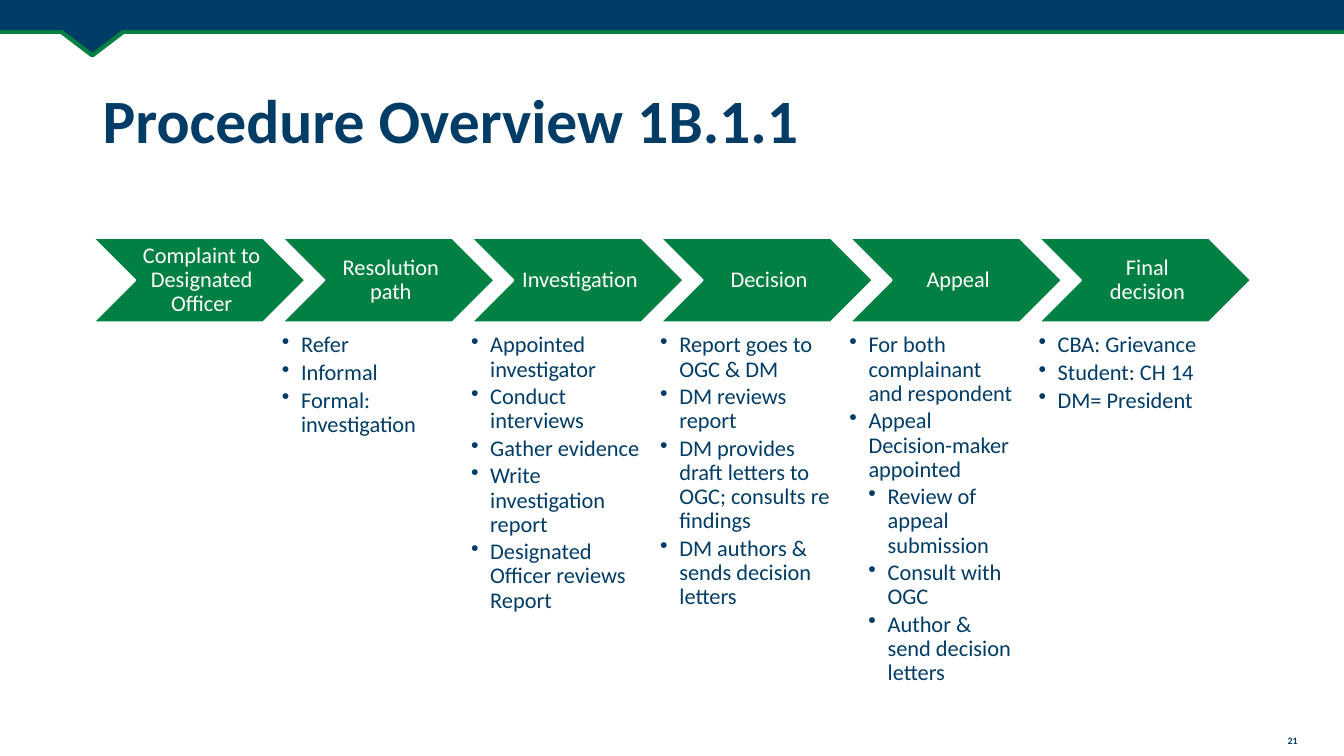
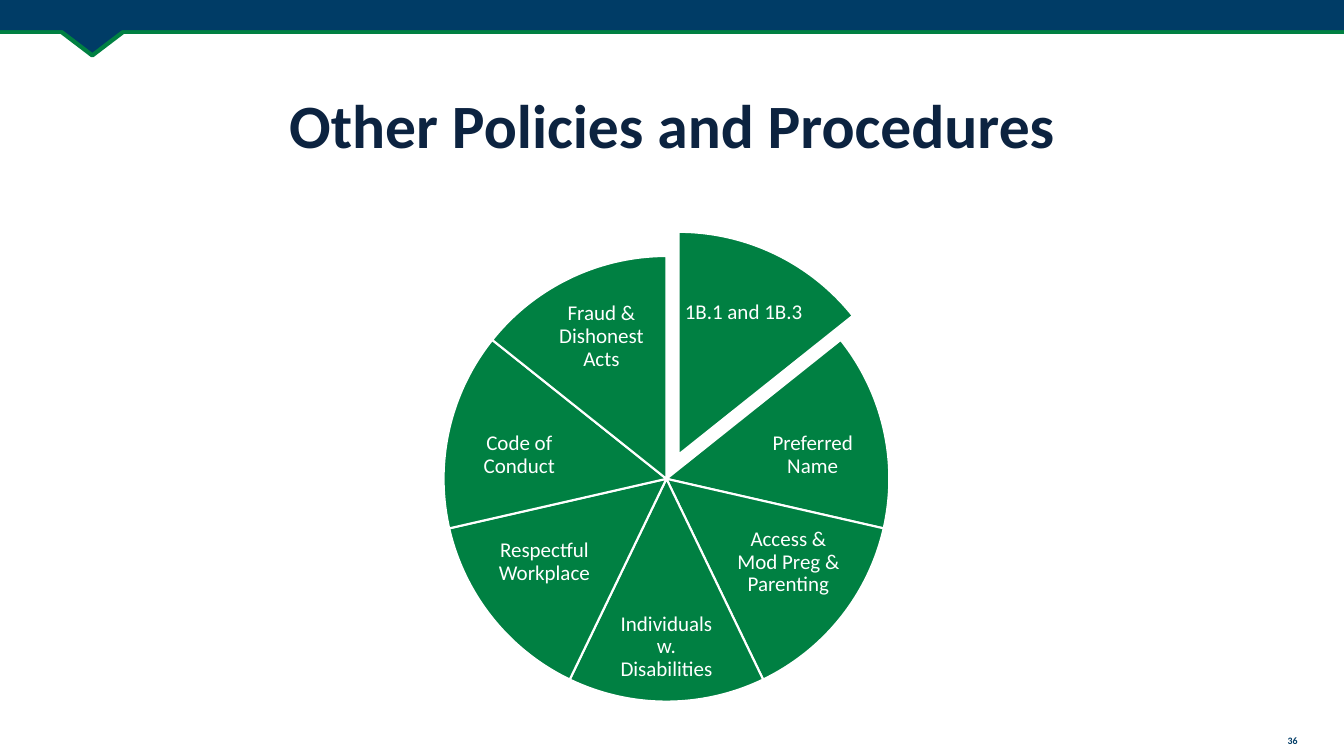
"""Build two slides: a complaint procedure overview and a wheel of related policies."""
from dataclasses import dataclass

from lxml import etree
from pptx import Presentation
from pptx.dml.color import RGBColor
from pptx.enum.shapes import MSO_CONNECTOR, MSO_SHAPE
from pptx.enum.text import MSO_ANCHOR, PP_ALIGN
from pptx.oxml.ns import qn
from pptx.util import Inches, Pt

LEFT, CENTER = PP_ALIGN.LEFT, PP_ALIGN.CENTER
TOP, MIDDLE = MSO_ANCHOR.TOP, MSO_ANCHOR.MIDDLE
STRAIGHT = MSO_CONNECTOR.STRAIGHT
RECTANGLE, TRIANGLE = MSO_SHAPE.RECTANGLE, MSO_SHAPE.ISOSCELES_TRIANGLE
CHEVRON, PIE = MSO_SHAPE.CHEVRON, MSO_SHAPE.PIE


@dataclass(frozen=True)
class Theme:
    font: str = "Calibri"
    blue: RGBColor = RGBColor(0x00, 0x3C, 0x66)
    navy: RGBColor = RGBColor(0x0C, 0x23, 0x40)
    green: RGBColor = RGBColor(0x00, 0x80, 0x42)
    white: RGBColor = RGBColor(0xFF, 0xFF, 0xFF)
    title_size: float = 44
    step_size: float = 16
    slice_size: float = 15
    number_size: float = 7
    band_line: float = 3
    edge_line: float = 1.5


THEME = Theme()
SLIDE_WIDTH, SLIDE_HEIGHT = 13.33, 7.5


def add_shape(page, kind, area, fill, edge=None, edge_width=0):
    shape = page.shapes.add_shape(kind, *map(Inches, area))
    shape.shadow.inherit = False
    shape.fill.solid()
    shape.fill.fore_color.rgb = fill
    if edge is None:
        shape.line.fill.background()
    else:
        shape.line.color.rgb = edge
        shape.line.width = Pt(edge_width)
    return shape


def write(box, lines, size, color, bold=False, align=CENTER, anchor=MIDDLE,
          insets=(0.1, 0.05, 0.1, 0.05), spacing=0.9):
    frame = box.text_frame
    frame.text = "\n".join(lines)
    frame.word_wrap = True
    frame.vertical_anchor = anchor
    (frame.margin_left, frame.margin_top,
     frame.margin_right, frame.margin_bottom) = map(Inches, insets)
    for para in frame.paragraphs:
        para.alignment = align
        para.line_spacing = spacing
        for span in para.runs:
            span.font.name = THEME.font
            span.font.size = Pt(size)
            span.font.bold = bold
            span.font.color.rgb = color
    return frame


deck = Presentation()
deck.slide_width, deck.slide_height = Inches(SLIDE_WIDTH), Inches(SLIDE_HEIGHT)
blank = deck.slide_layouts[6]

headings = [
    ("Procedure Overview 1B.1.1", "21", THEME.blue, LEFT, 0.9),
    ("Other Policies and Procedures", "36", THEME.navy, CENTER, 1.0),
]
pages = []
for title, number, color, align, spacing in headings:
    page = deck.slides.add_slide(blank)
    pages.append(page)
    rule = page.shapes.add_connector(
        STRAIGHT, 0, Inches(0.32), Inches(SLIDE_WIDTH), Inches(0.32))
    rule.line.color.rgb = THEME.green
    rule.line.width = Pt(THEME.band_line)
    etree.SubElement(rule.element.spPr, qn("a:effectLst"))
    pointer = add_shape(page, TRIANGLE, (0.39, 0.15, 1.05, 0.4),
                        THEME.blue, THEME.green, THEME.band_line)
    pointer.rotation = 180
    add_shape(page, RECTANGLE, (0, 0, SLIDE_WIDTH, 0.3), THEME.blue)
    number_box = page.shapes.add_textbox(*map(Inches, (12.57, 7.24, 0.5, 0.22)))
    write(number_box, [number], THEME.number_size, THEME.blue, bold=True,
          anchor=TOP, spacing=1.0)
    title_box = page.shapes.add_textbox(*map(Inches, (0.92, 0.5, 11.5, 1.45)))
    write(title_box, [title], THEME.title_size, color, bold=True,
          align=align, spacing=spacing)

overview, policies = pages

steps = [
    ("Complaint to Designated Officer", []),
    ("Resolution path", [
        ("Refer", 1), ("Informal", 1), ("Formal: investigation", 1)]),
    ("Investigation", [
        ("Appointed investigator", 1), ("Conduct interviews", 1),
        ("Gather evidence", 1), ("Write investigation report", 1),
        ("Designated Officer reviews Report", 1)]),
    ("Decision", [
        ("Report goes to OGC & DM", 1), ("DM reviews report", 1),
        ("DM provides draft letters to OGC; consults re findings", 1),
        ("DM authors & sends decision letters", 1)]),
    ("Appeal", [
        ("For both complainant and respondent", 1),
        ("Appeal Decision-maker appointed", 1),
        ("Review of appeal submission", 2), ("Consult with OGC", 2),
        ("Author & send decision letters", 2)]),
    ("Final decision", [
        ("CBA: Grievance", 1), ("Student: CH 14", 1), ("DM= President", 1)]),
]
step_left, step_pitch, bullet_indent = 0.92, 1.876, 0.19
for index, (step, details) in enumerate(steps):
    left = step_left + index * step_pitch
    chevron = add_shape(overview, CHEVRON, (left, 2.36, 2.11, 0.84),
                        THEME.green, THEME.white, THEME.edge_line)
    write(chevron, [step], THEME.step_size, THEME.white,
          insets=(0.07, 0.02, 0.02, 0.02))
    if not details:
        continue
    detail_box = overview.shapes.add_textbox(*map(Inches, (left, 3.31, 1.69, 3.59)))
    frame = write(detail_box, [text for text, level in details], THEME.step_size,
                  THEME.blue, align=LEFT, anchor=TOP, insets=(0, 0, 0, 0))
    for para, (text, level) in zip(frame.paragraphs, details):
        para.level = level
        para.space_after = Pt(2.4)
        properties = para._p.get_or_add_pPr()
        properties.set("marL", str(Inches(bullet_indent * level)))
        properties.set("indent", str(-Inches(bullet_indent)))
        etree.SubElement(properties, qn("a:buChar"), char="•")

slices = [
    ("1B.1 and 1B.3", (6.77, 2.72, 1.21, 0.76)),
    ("Preferred Name", (7.42, 4.11, 1.28, 0.81)),
    ("Access & Mod Preg & Parenting", (7.24, 5.16, 1.16, 0.84)),
    ("Individuals w. Disabilities", (6.02, 6, 1.18, 0.84)),
    ("Respectful Workplace", (4.82, 5.16, 1.16, 0.84)),
    ("Code of Conduct", (4.51, 4.11, 1.28, 0.81)),
    ("Fraud & Dishonest Acts", (5.36, 2.96, 1.21, 0.76)),
]
wheel_size, full_turn, wheel_top = 4.42, 216, 162
sweep = full_turn / len(slices)
for index, (label, label_area) in enumerate(slices):
    left, top = (4.52, 2.3) if index == 0 else (4.4, 2.54)
    wedge = add_shape(policies, PIE, (left, top, wheel_size, wheel_size),
                      THEME.green, THEME.white, THEME.edge_line)
    wedge.adjustments[0] = (wheel_top + index * sweep) % full_turn
    wedge.adjustments[1] = (wheel_top + (index + 1) * sweep) % full_turn
    label_box = policies.shapes.add_textbox(*map(Inches, label_area))
    write(label_box, [label], THEME.slice_size, THEME.white,
          insets=(0.02, 0.02, 0.02, 0.02))

deck.save("out.pptx")
